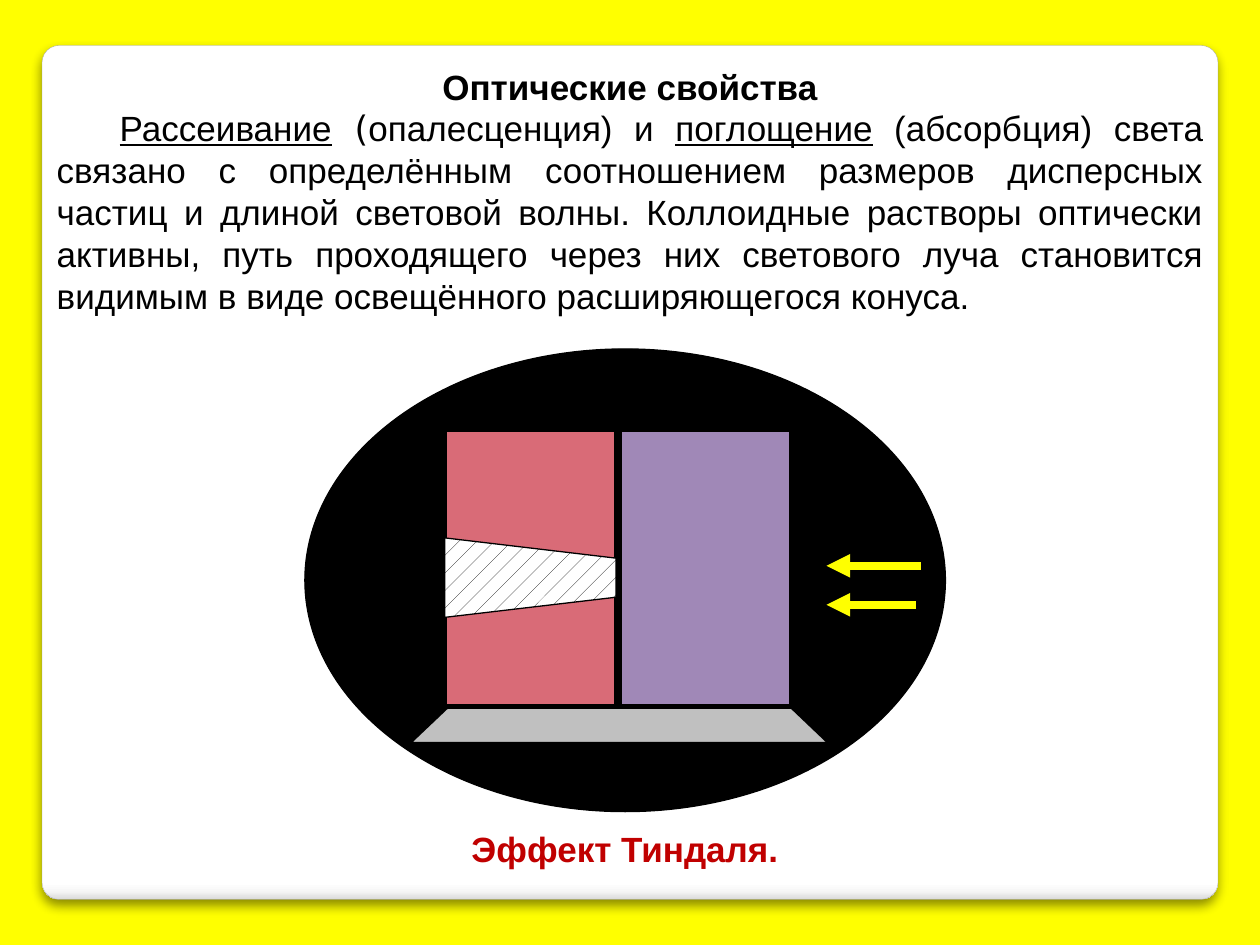
"""Build a slide on optical properties with a diagram of the Tyndall effect."""
from dataclasses import dataclass

from pptx import Presentation
from pptx import util as u
from pptx.dml.color import RGBColor
from pptx.enum import dml, shapes, text
from pptx.oxml import parse_xml

INK = {
    "page": "FFFF00", "card": "FFFFFF", "edge": "A4A4A4", "dark": "000000",
    "rose": "D96B77", "plum": "A088B7", "base": "C0C0C0", "note": "C00000",
}
NS = 'xmlns:a="http://schemas.openxmlformats.org/drawingml/2006/main"'
STOPS = ((0, "FFFFFF"), (98, "FFFFFF"), (99, "F7F7F7"), (100, "DADADA"))
KIND = shapes.MSO_SHAPE
ALIGN = text.PP_ALIGN


@dataclass
class Box:
    """A box in points."""
    left: float
    top: float
    wide: float
    high: float

    def emu(self) -> list:
        return [u.Pt(n) for n in (self.left, self.top, self.wide, self.high)]


@dataclass
class Block:
    """A filled preset shape."""
    kind: int
    box: Box
    fill: str
    edge: str
    width: float


@dataclass
class Ray:
    """A level arrow that points left."""
    start: float
    end: float
    y: float


def tint(name: str) -> RGBColor:
    return RGBColor.from_string(INK[name])


def trim(shape, edge: str, width: float) -> None:
    shape.shadow.inherit = False
    shape.line.color.rgb = tint(edge)
    shape.line.width = u.Pt(width)


def block(slide, item: Block):
    shape = slide.shapes.add_shape(item.kind, *item.box.emu())
    shape.fill.solid()
    shape.fill.fore_color.rgb = tint(item.fill)
    trim(shape, item.edge, item.width)
    return shape


def card(slide) -> None:
    shape = block(slide, Block(KIND.ROUNDED_RECTANGLE, Box(24, 26, 672, 488),
                               "card", "edge", 0.16))
    shape.adjustments[0] = 0.02
    props = shape.element.spPr
    stops = "".join(f'<a:gs pos="{pos * 1000}"><a:srgbClr val="{hue}"/></a:gs>'
                    for pos, hue in STOPS)
    shape.fill.background()
    props.replace(props.find("{*}noFill"), parse_xml(
        f'<a:gradFill {NS}><a:gsLst>{stops}</a:gsLst>'
        '<a:lin ang="5400000" scaled="0"/></a:gradFill>'))
    props.find("{*}effectLst").append(parse_xml(
        f'<a:outerShdw {NS} blurRad="{u.Pt(6)}" dist="{u.Pt(4)}" dir="5400000" '
        'algn="ctr" rotWithShape="0"><a:srgbClr val="000000">'
        '<a:alpha val="45000"/></a:srgbClr></a:outerShdw>'))


def outline(slide, spots: list, width: float):
    pts = [(u.Pt(x), u.Pt(y)) for x, y in spots]
    pen = slide.shapes.build_freeform(*pts[0], scale=1.0)
    pen.add_line_segments(pts[1:], close=True)
    shape = pen.convert_to_shape()
    trim(shape, "dark", width)
    return shape


def ray(slide, item: Ray) -> None:
    line = slide.shapes.add_connector(
        shapes.MSO_CONNECTOR.STRAIGHT,
        *(u.Pt(n) for n in (item.start, item.y, item.end, item.y)))
    line.line.color.rgb = tint("page")
    line.line.width = u.Pt(4.5)
    line.line._get_or_add_ln().append(parse_xml(f'<a:tailEnd {NS} type="triangle"/>'))
    line.element.spPr.append(parse_xml(f"<a:effectLst {NS}/>"))


def write(shape, runs: list, box: Box, *, align=ALIGN.CENTER, bold=False,
          hue="dark", after=0, indent=0) -> None:
    shape.left, shape.top, shape.width, shape.height = box.emu()
    frame = shape.text_frame
    frame.word_wrap = True
    frame.auto_size = text.MSO_AUTO_SIZE.NONE
    frame.vertical_anchor = text.MSO_ANCHOR.TOP
    para = frame.paragraphs[0]
    para.alignment = align
    para.space_before, para.space_after = u.Pt(0), u.Pt(after)
    props = para._p.get_or_add_pPr()
    props.set("marL", "0")
    props.set("indent", str(u.Pt(indent)))
    props.append(parse_xml(f"<a:buNone {NS}/>"))
    for words, face, under in runs:
        run = para.add_run()
        run.text = words
        font = run.font
        font.name, font.size = face, u.Pt(20)
        font.bold, font.underline = bold, under
        font.color.rgb = tint(hue)


def main() -> None:
    deck = Presentation()
    deck.slide_width, deck.slide_height = u.Pt(720), u.Pt(540)
    slide = deck.slides.add_slide(deck.slide_layouts[1])
    back = slide.background.fill
    back.solid()
    back.fore_color.rgb = tint("page")

    card(slide)
    block(slide, Block(KIND.OVAL, Box(174.25, 199.4, 366, 264.4),
                       "dark", "dark", 0.75))
    for left, hue in ((254.2, "rose"), (354.2, "plum")):
        block(slide, Block(KIND.RECTANGLE, Box(left, 245.5, 98, 157.7),
                           hue, "dark", 2.25))

    base = outline(slide, [(234.7, 424.4), (255.6, 404.6),
                           (452.2, 404.6), (473, 424.4)], 1)
    base.fill.solid()
    base.fill.fore_color.rgb = tint("base")

    cone = outline(slide, [(254.2, 352.8), (352.1, 341.3),
                           (352.1, 319), (254.2, 307.4)], 0.75)
    cone.fill.patterned()
    cone.fill.pattern = dml.MSO_PATTERN.PERCENT_5
    cone.fill.fore_color.rgb = tint("dark")
    cone.fill.back_color.rgb = tint("card")

    for item in (Ray(526.3, 472.3, 323.3), Ray(523.4, 472.3, 345.6)):
        ray(slide, item)

    write(slide.shapes.title, [("Оптические свойства", "Arial", False)],
          Box(25.2, 33.8, 669.6, 30), bold=True)
    write(slide.placeholders[1], [
        ("Рассеивание", "Arial", True),
        (" (", "DejaVu Sans", False),
        ("опалесценция) и ", "Arial", False),
        ("поглощение", "Arial", True),
        (" (абсорбция) света связано с определённым соотношением размеров "
         "дисперсных частиц и длиной световой волны. Коллоидные растворы "
         "оптически активны, путь проходящего через них светового луча "
         "становится видимым в виде освещённого расширяющегося конуса.",
         "Arial", False),
    ], Box(25.2, 57.2, 669.6, 129), align=ALIGN.JUSTIFY, indent=36)
    note = slide.shapes.add_textbox(0, 0, 0, 0)
    write(note, [("Эффект Тиндаля.", "Arial", False)],
          Box(230.4, 469.4, 253.4, 33), bold=True, hue="note", after=10)

    tree = slide.shapes._spTree
    for shape in (slide.shapes.title, slide.placeholders[1]):
        tree.append(shape.element)
    deck.save("out.pptx")


if __name__ == "__main__":
    main()
